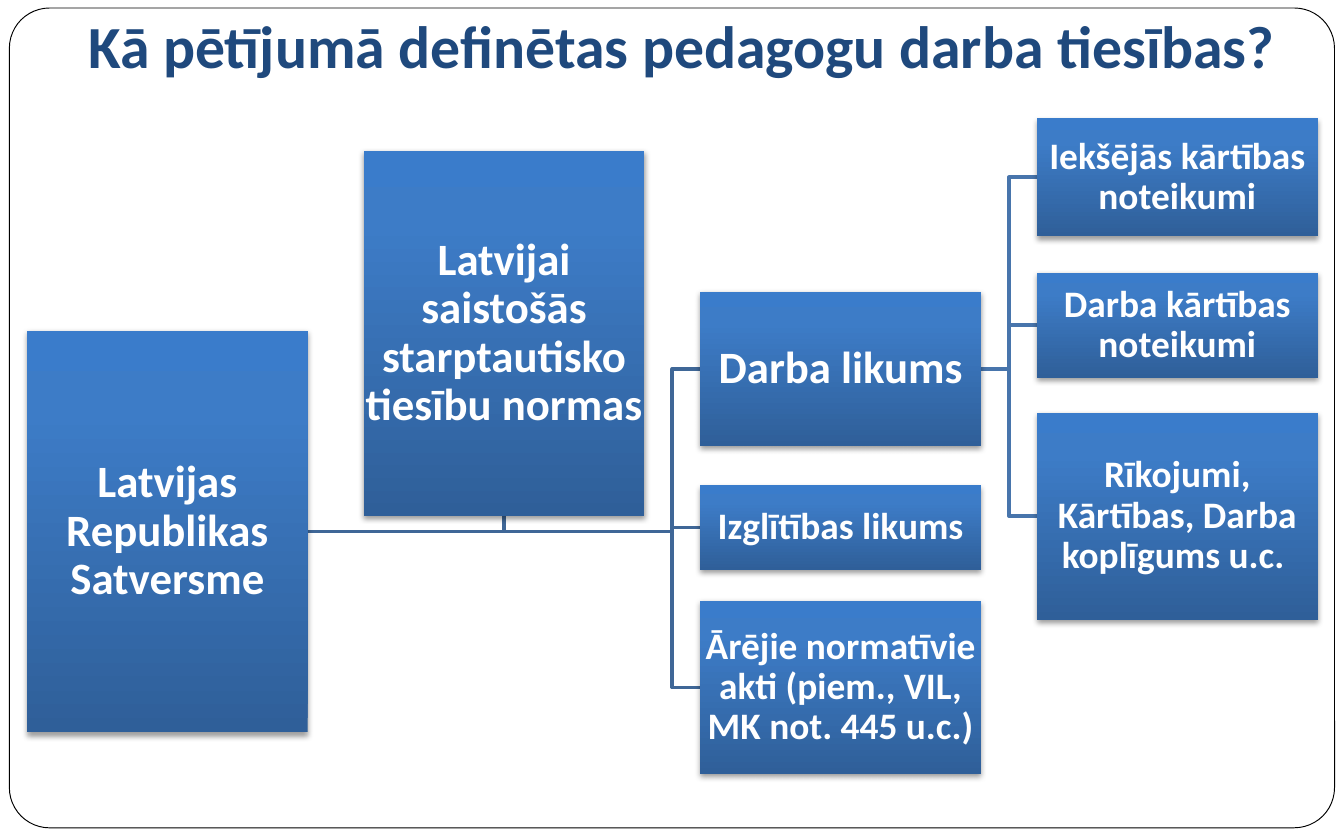
from copy import deepcopy

from lxml import etree
from pptx import Presentation
from pptx.dml.color import RGBColor
from pptx.enum.shapes import MSO_SHAPE
from pptx.enum.text import MSO_ANCHOR, MSO_AUTO_SIZE, PP_ALIGN
from pptx.oxml.ns import qn
from pptx.util import Inches, Pt

RECTANGLE, ROUNDED = MSO_SHAPE.RECTANGLE, MSO_SHAPE.ROUNDED_RECTANGLE
MIDDLE, BOTTOM = MSO_ANCHOR.MIDDLE, MSO_ANCHOR.BOTTOM
CENTER = PP_ALIGN.CENTER
NO_AUTOSIZE = MSO_AUTO_SIZE.NONE
TITLE_ONLY = 5

FONT = "Calibri"
GRADIENT = [(0, "2F5F99"), (0.8, "3D7CC7"), (1, "3A7CCB")]
BOX_WIDTH = 2.09
COLUMN_STEP = 2.505
GAP = COLUMN_STEP - BOX_WIDTH

# Boxes by column: top, height, text size, text
CONSTITUTION = (2.46, 2.99, 24, "Latvijas Republikas Satversme")
INTERNATIONAL = (1.12, 2.72, 24, "Latvijai saistošās starptautisko tiesību normas ")
LAWS = [
    (2.17, 1.15, 24, "Darba likums"),
    (3.61, 0.63, 20, "Izglītības likums"),
    (4.47, 1.29, 20, "Ārējie normatīvie akti (piem., VIL, MK not. 445 u.c.)"),
]
RULES = [
    (0.88, 0.88, 20, "Iekšējās kārtības noteikumi"),
    (2.03, 0.78, 20, "Darba kārtības noteikumi"),
    (3.07, 1.54, 20, "Rīkojumi, Kārtības, Darba koplīgums u.c. "),
]


def color(value):
    return RGBColor.from_string(value)


def format_text(frame, size, value, anchor, margins):
    frame.word_wrap = True
    frame.auto_size = NO_AUTOSIZE
    frame.vertical_anchor = anchor
    frame.margin_left, frame.margin_top, frame.margin_right, frame.margin_bottom = [
        Inches(margin) for margin in margins]
    para = frame.paragraphs[0]
    para.alignment = CENTER
    para.line_spacing = 0.9
    for span in para.runs:
        span.font.name, span.font.size, span.font.bold = FONT, Pt(size), True
        span.font.color.rgb = color(value)


def add_frame(page, left, top, width, height):
    frame = page.shapes.add_shape(
        ROUNDED, Inches(left), Inches(top), Inches(width), Inches(height))
    frame.adjustments[0] = 0.049
    frame.shadow.inherit = False
    frame.fill.solid()
    frame.fill.fore_color.rgb = color("FFFFFF")
    frame.line.color.rgb = color("000000")
    frame.line.width = Pt(0.5)
    # Behind the title
    page.shapes.title._element.addprevious(frame._element)


def add_title(page, left, top, width, height):
    title = page.shapes.title
    title.left, title.top = Inches(left), Inches(top)
    title.width, title.height = Inches(width), Inches(height)
    title.text_frame.text = "Kā pētījumā definētas pedagogu darba tiesības?"
    format_text(title.text_frame, 32, "1F497D", BOTTOM, (0.1, 0.05, 0.1, 0.1))
    title.text_frame.paragraphs[0].line_spacing = 1.0


def fill_gradient(shape):
    shape.fill.gradient()
    shape.fill.gradient_angle = 90
    stop_list = shape._element.spPr.find(qn("a:gradFill")).find(qn("a:gsLst"))
    stop_list.append(deepcopy(stop_list[-1]))
    for stop, (position, value) in zip(shape.fill.gradient_stops, GRADIENT):
        stop.position = position
        stop.color.rgb = color(value)


def add_shadow(shape):
    shape.shadow.inherit = False
    effects = shape._element.spPr.find(qn("a:effectLst"))
    shadow = etree.SubElement(
        effects, qn("a:outerShdw"), blurRad=str(Pt(3.1)), dist=str(Pt(1.6)),
        dir="5400000", rotWithShape="0")
    tone = etree.SubElement(shadow, qn("a:srgbClr"), val="000000")
    etree.SubElement(tone, qn("a:alpha"), val="38000")


def add_box(page, left, top, height, size, text):
    box = page.shapes.add_shape(
        RECTANGLE, Inches(left), Inches(top), Inches(BOX_WIDTH), Inches(height))
    fill_gradient(box)
    box.line.fill.background()
    add_shadow(box)
    box.text_frame.text = text
    format_text(box.text_frame, size, "FFFFFF", MIDDLE, [0.015] * 4)


def add_link(page, points, value):
    corners = [(Inches(x), Inches(y)) for x, y in points]
    builder = page.shapes.build_freeform(*corners[0])
    builder.add_line_segments(corners[1:], close=False)
    link = builder.convert_to_shape()
    link.fill.background()
    link.line.color.rgb = color(value)
    link.line.width = Pt(2)
    link.shadow.inherit = False


def middle(entry):
    return entry[0] + entry[1] / 2


def add_branches(page, start, end, source, children, value):
    """Link one box to each child, turning halfway across the last gap."""
    turn = end - GAP / 2
    y = middle(source)
    for child in children:
        add_link(page, [(start, y), (turn, y), (turn, middle(child)),
                        (end, middle(child))], value)


def add_hierarchy(page, left):
    columns = [left + COLUMN_STEP * number for number in range(4)]
    right_edges = [column + BOX_WIDTH for column in columns]

    # Links, behind the boxes
    trunk = middle(CONSTITUTION)
    center = columns[1] + BOX_WIDTH / 2
    add_link(page, [(right_edges[0], trunk), (center, trunk),
                    (center, INTERNATIONAL[0] + INTERNATIONAL[1])], "3F6797")
    add_branches(page, right_edges[0], columns[2], CONSTITUTION, LAWS, "3F6797")
    add_branches(page, right_edges[2], columns[3], LAWS[0], RULES, "4875AC")

    # Boxes
    groups = [[CONSTITUTION], [INTERNATIONAL], LAWS, RULES]
    for column, group in zip(columns, groups):
        for entry in group:
            add_box(page, column, *entry)


def main():
    deck = Presentation()
    deck.slide_width, deck.slide_height = Inches(10), Inches(6.25)
    page = deck.slides.add_slide(deck.slide_layouts[TITLE_ONLY])
    add_frame(page, 0.07, 0.06, 9.86, 6.1)
    add_title(page, 0.39, 0, 9.37, 0.7)
    add_hierarchy(page, 0.2)
    deck.save("out.pptx")


if __name__ == "__main__":
    main()
